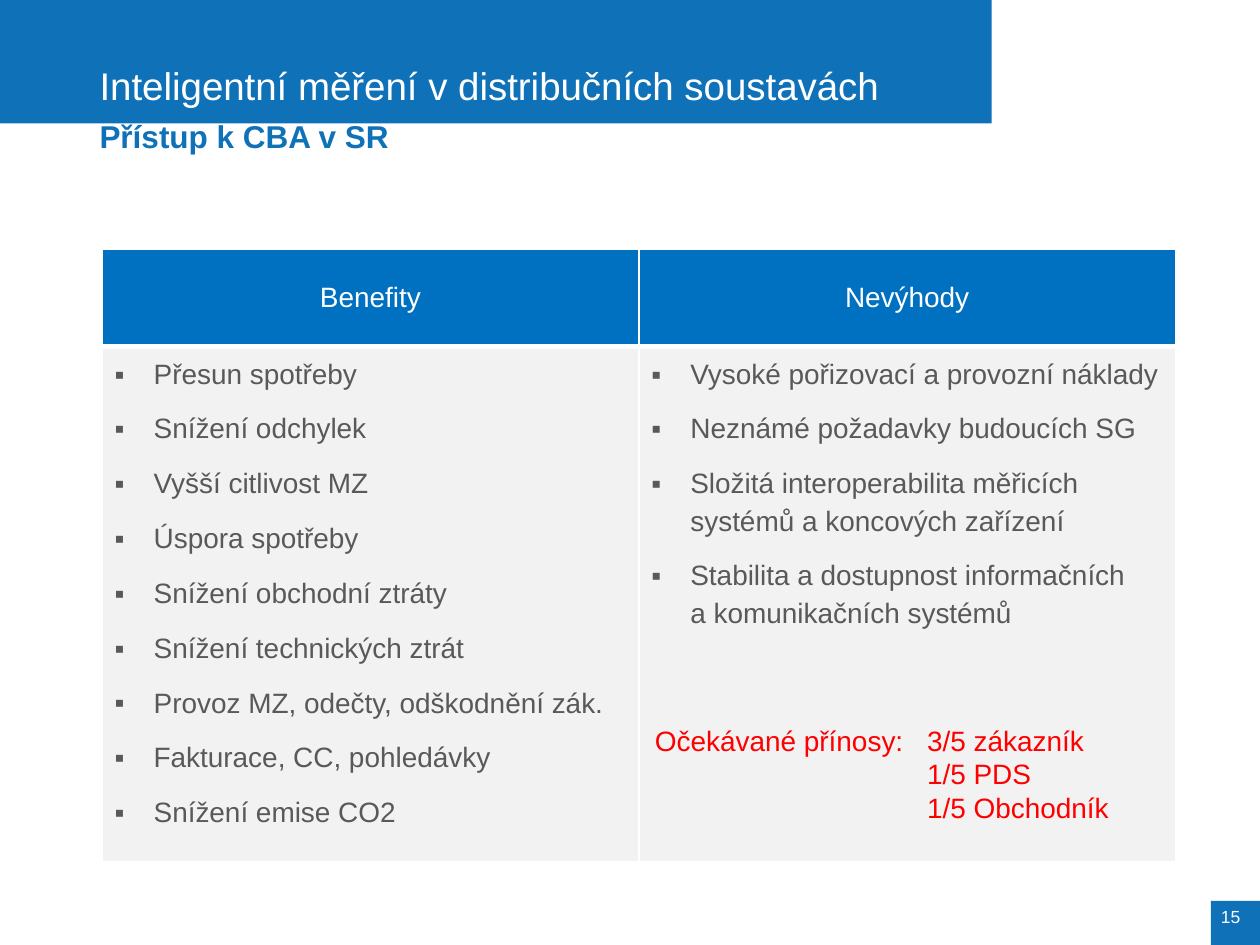
from lxml.etree import SubElement
from pptx import Presentation
from pptx.dml.color import RGBColor
from pptx.enum.shapes import MSO_SHAPE
from pptx.enum.text import MSO_ANCHOR, PP_ALIGN
from pptx.oxml.ns import qn
from pptx.util import Inches, Pt

BLUE, WHITE, RED = "0F71B8", "FFFFFF", "FF0000"
HEADER_BLUE, PALE_GREY, DARK_GREY = "0070C0", "F2F2F2", "595959"


def color(value):
    return RGBColor.from_string(value)


def write(frame, lines, *, size, hex_color, bold=False, align=PP_ALIGN.LEFT,
          anchor=MSO_ANCHOR.TOP, insets=(0.1, 0.05, 0.1, 0.05), wrap=True,
          spaced=False, bullet=None, hang=None, tab=None):
    """Fill a text frame; insets are left, top, right, bottom in inches,
    hang is (left margin, first-line indent)."""
    frame.word_wrap = wrap
    frame.vertical_anchor = anchor
    for side, inset in zip(("left", "top", "right", "bottom"), insets):
        setattr(frame, f"margin_{side}", Inches(inset))
    for i, line in enumerate(lines):
        paragraph = frame.add_paragraph() if i else frame.paragraphs[0]
        paragraph.text = line
        paragraph.alignment = align
        if spaced:
            paragraph.line_spacing = 1.2
            paragraph.space_before = Pt(10)
        properties = paragraph._p.get_or_add_pPr()
        if hang:
            properties.set("marL", str(Inches(hang[0])))
            properties.set("indent", str(Inches(hang[1])))
        if bullet:
            SubElement(properties, qn("a:buFont"), typeface="Arial")
            SubElement(properties, qn("a:buChar"), char=bullet)
        if tab:
            tabs = SubElement(properties, qn("a:tabLst"))
            SubElement(tabs, qn("a:tab"), pos=str(Inches(tab)), algn="l")
        for run in paragraph.runs:
            run.font.name = "Arial"
            run.font.size = Pt(size)
            run.font.bold = bold
            run.font.color.rgb = color(hex_color)


prs = Presentation()
prs.slide_width, prs.slide_height = Inches(10), Inches(7.5)
slide = prs.slides.add_slide(prs.slide_layouts[6])
shapes = slide.shapes

# Subtitle, title band and page number
subtitle = shapes.add_textbox(0, 0, Inches(10), Inches(6.98))
write(subtitle.text_frame, ["Přístup k CBA v SR"], size=18, hex_color=BLUE,
      bold=True, insets=(0.79, 1.38, 0.79, 0), spaced=True)

bands = [
    ((0, 0, 7.87, 0.98), "Inteligentní měření v distribučních soustavách", 22,
     MSO_ANCHOR.BOTTOM, (0.79, 0.2, 0.39, 0.12)),
    ((9.61, 7.15, 0.39, 0.35), "15", 10, MSO_ANCHOR.TOP, (0.08, 0.04, 0, 0)),
]
for box, text, size, anchor, insets in bands:
    band = shapes.add_shape(MSO_SHAPE.RECTANGLE, *map(Inches, box))
    band.shadow.inherit = False
    band.fill.solid()
    band.fill.fore_color.rgb = color(BLUE)
    band.line.fill.background()
    write(band.text_frame, [text], size=size, hex_color=WHITE,
          anchor=anchor, insets=insets)

# Benefits and drawbacks
columns = {
    "Benefity": [
        "Přesun spotřeby",
        "Snížení odchylek",
        "Vyšší citlivost MZ",
        "Úspora spotřeby",
        "Snížení obchodní ztráty",
        "Snížení technických ztrát",
        "Provoz MZ, odečty, odškodnění zák.",
        "Fakturace, CC, pohledávky",
        "Snížení emise CO2",
    ],
    "Nevýhody": [
        "Vysoké pořizovací a provozní náklady",
        "Neznámé požadavky budoucích SG",
        "Složitá interoperabilita měřicích systémů a koncových zařízení",
        "Stabilita a dostupnost informačních \na komunikačních systémů",
    ],
}
comparison = shapes.add_table(2, 2, Inches(0.81), Inches(1.98),
                              Inches(8.52), Inches(4.53)).table
comparison.rows[0].height = Inches(0.77)
comparison.rows[1].height = Inches(3.76)

for col, (heading, points) in enumerate(columns.items()):
    header, body = comparison.cell(0, col), comparison.cell(1, col)
    for cell, fill in ((header, HEADER_BLUE), (body, PALE_GREY)):
        cell_properties = cell._tc.get_or_add_tcPr()
        for side in "LRTB":
            at_divider = (cell is header and side == "B") or (cell is body and side == "T")
            border = SubElement(cell_properties, qn(f"a:ln{side}"),
                                w=str(Pt(3 if at_divider else 1)))
            line_fill = SubElement(border, qn("a:solidFill"))
            SubElement(line_fill, qn("a:srgbClr"), val=WHITE)
        cell.fill.solid()
        cell.fill.fore_color.rgb = color(fill)
    write(header.text_frame, [heading], size=16, hex_color=WHITE,
          align=PP_ALIGN.CENTER)
    header.vertical_anchor = MSO_ANCHOR.MIDDLE
    write(body.text_frame, points, size=16, hex_color=DARK_GREY, spaced=True,
          bullet="▪", hang=(0.31, -0.31))

# Expected gains, shares aligned at one tab stop
gains = shapes.add_textbox(Inches(5.1), Inches(5.69), Inches(3.84), Inches(0.91))
write(gains.text_frame,
      ["Očekávané přínosy:\t3/5 zákazník", "\t1/5 PDS", "\t1/5 Obchodník"],
      size=16, hex_color=RED, wrap=False, tab=2.16)

prs.save("out.pptx")
